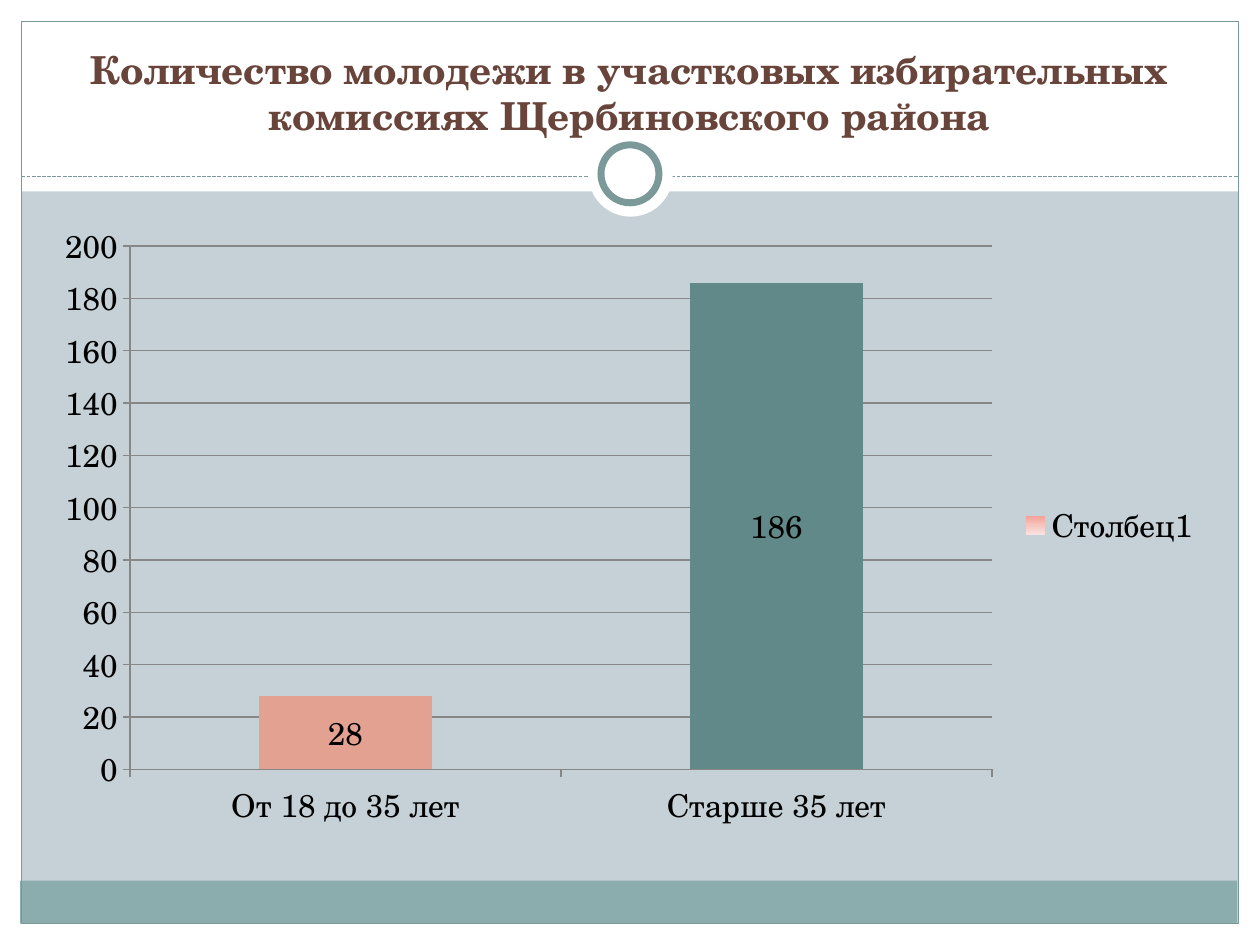
from copy import deepcopy
from dataclasses import dataclass

from pptx import Presentation
from pptx.chart.data import CategoryChartData
from pptx.dml.color import RGBColor
from pptx.enum.chart import XL_CHART_TYPE, XL_LEGEND_POSITION, XL_TICK_MARK
from pptx.enum.dml import MSO_LINE
from pptx.enum.shapes import MSO_CONNECTOR, MSO_SHAPE
from pptx.enum.text import MSO_ANCHOR, MSO_AUTO_SIZE, PP_ALIGN
from pptx.oxml.ns import qn
from pptx.util import Inches, Pt
from lxml.etree import SubElement


@dataclass(frozen=True)
class Theme:
    """Colours, typeface and type sizes of the deck."""

    background: str = "C5D1D7"
    white: str = "FFFFFF"
    band: str = "8CADAE"
    border: str = "7C999A"
    title: str = "68443A"
    text: str = "000000"
    grid: str = "878787"
    bars: tuple = ("E3A192", "61898A")
    gradient: tuple = ((0, "F4A095"), (0.5, "F6C5BF"), (1, "FAE2E0"))
    typeface: str = "TeX Gyre Schola"
    title_size: int = 22
    chart_size: int = 18


def assign(target, values):
    """Set each named attribute on the target."""
    for name, value in values.items():
        setattr(target, name, value)


class SlideBuilder:
    """Holds the style and the current slide."""

    def __init__(self, page, theme):
        """Remember the page and paint its background."""
        self.page, self.theme = page, theme
        self.paint(page.background.fill, theme.background)

    def paint(self, fill, color):
        """Give a solid fill."""
        fill.solid()
        fill.fore_color.rgb = RGBColor.from_string(color)

    def stroke(self, line, color, width=0.75):
        """Give a line its colour and width."""
        self.paint(line.fill, color)
        line.width = Pt(width)

    def style_font(self, font, size, color, bold=False):
        """Give text its typeface, size, colour and weight."""
        assign(font, {"name": self.theme.typeface, "size": Pt(size), "bold": bold})
        font.color.rgb = RGBColor.from_string(color)

    def shape(self, kind, bounds, fill=None, border=None, width=0.75):
        """Add a preset shape."""
        shape = self.page.shapes.add_shape(kind, *map(Inches, bounds))
        shape.shadow.inherit = False
        if fill:
            self.paint(shape.fill, fill)
        else:
            shape.fill.background()
        if border:
            self.stroke(shape.line, border, width)
        else:
            shape.line.fill.background()

    def dashed_line(self, start, end):
        """Add a dashed straight line."""
        line = self.page.shapes.add_connector(
            MSO_CONNECTOR.STRAIGHT, *map(Inches, start + end)
        )
        self.stroke(line.line, self.theme.border)
        line.line.dash_style = MSO_LINE.SQUARE_DOT
        SubElement(line.element.spPr, qn("a:effectLst"))

    def title(self, text, bounds):
        """Fill the title placeholder and bring it to the front."""
        box = self.page.shapes.title
        assign(box, dict(zip(("left", "top", "width", "height"), map(Inches, bounds))))
        frame = box.text_frame
        frame.text = text
        assign(frame, {
            "word_wrap": True,
            "auto_size": MSO_AUTO_SIZE.NONE,
            "vertical_anchor": MSO_ANCHOR.BOTTOM,
        })
        para = frame.paragraphs[0]
        para.alignment = PP_ALIGN.CENTER
        self.style_font(para.runs[0].font, self.theme.title_size, self.theme.title, True)
        box.element.getparent().append(box.element)

    def column_chart(self, name, values, bounds):
        """Add a stacked column chart with one colour per column."""
        theme = self.theme
        data = CategoryChartData()
        data.categories = list(values)
        data.add_series(name, list(values.values()))
        chart = self.page.shapes.add_chart(
            XL_CHART_TYPE.COLUMN_STACKED, *map(Inches, bounds), data
        ).chart
        assign(chart, {"has_title": False, "has_legend": True})
        assign(chart.legend, {
            "position": XL_LEGEND_POSITION.RIGHT, "include_in_layout": False,
        })
        self.style_font(chart.font, theme.chart_size, theme.text)
        plot = chart.plots[0]
        assign(plot, {
            "gap_width": 150, "overlap": 100,
            "vary_by_categories": False, "has_data_labels": True,
        })
        plot.data_labels.show_value = True
        for axis in (chart.category_axis, chart.value_axis):
            axis.major_tick_mark = XL_TICK_MARK.OUTSIDE
            self.stroke(axis.format.line, theme.grid)
        assign(chart.value_axis, {
            "minimum_scale": 0, "maximum_scale": 200,
            "major_unit": 20, "has_major_gridlines": True,
        })
        self.stroke(chart.value_axis.major_gridlines.format.line, theme.grid)
        series = plot.series[0]
        series.invert_if_negative = False
        self.gradient(chart, series.format.fill)
        for index, color in enumerate(theme.bars):
            self.paint(series.points[index].format.fill, color)

    def gradient(self, chart, fill):
        """Give the series a vertical gradient."""
        fill.gradient()
        fill.gradient_angle = 270
        stops = chart.element.find(".//" + qn("a:gsLst"))
        while len(stops) < len(self.theme.gradient):
            stops.append(deepcopy(stops[0]))
        for stop, (position, color) in zip(fill.gradient_stops, self.theme.gradient):
            stop.position = position
            stop.color.rgb = RGBColor.from_string(color)


def main():
    """Build and save the deck."""
    deck = Presentation()
    assign(deck, {"slide_width": Inches(10), "slide_height": Inches(7.5)})
    theme = Theme()
    builder = SlideBuilder(deck.slides.add_slide(deck.slide_layouts[5]), theme)
    margins = (
        (0, 7.33, 10, 0.17), (0, 0, 10, 1.52), (0, 0, 0.17, 7.5), (9.83, 0, 0.17, 7.5),
    )
    for bounds in margins:
        builder.shape(MSO_SHAPE.RECTANGLE, bounds, theme.white)
    builder.shape(MSO_SHAPE.RECTANGLE, (0.16, 6.99, 9.66, 0.34), theme.band)
    builder.shape(MSO_SHAPE.RECTANGLE, (0.17, 0.17, 9.66, 7.16), border=theme.border)
    builder.dashed_line((0.17, 1.4), (9.83, 1.4))
    builder.shape(MSO_SHAPE.OVAL, (4.67, 1.05, 0.67, 0.67), theme.white)
    builder.shape(MSO_SHAPE.OVAL, (4.77, 1.15, 0.46, 0.46), theme.white, theme.border, 4)
    builder.title(
        "Количество молодежи в участковых избирательных комиссиях Щербиновского района",
        (0.33, 0.21, 9.33, 0.94),
    )
    builder.column_chart(
        "Столбец1", {"От 18 до 35 лет": 28, "Старше 35 лет": 186}, (0.33, 1.67, 9.3, 5)
    )
    deck.save("out.pptx")


if __name__ == "__main__":
    main()
